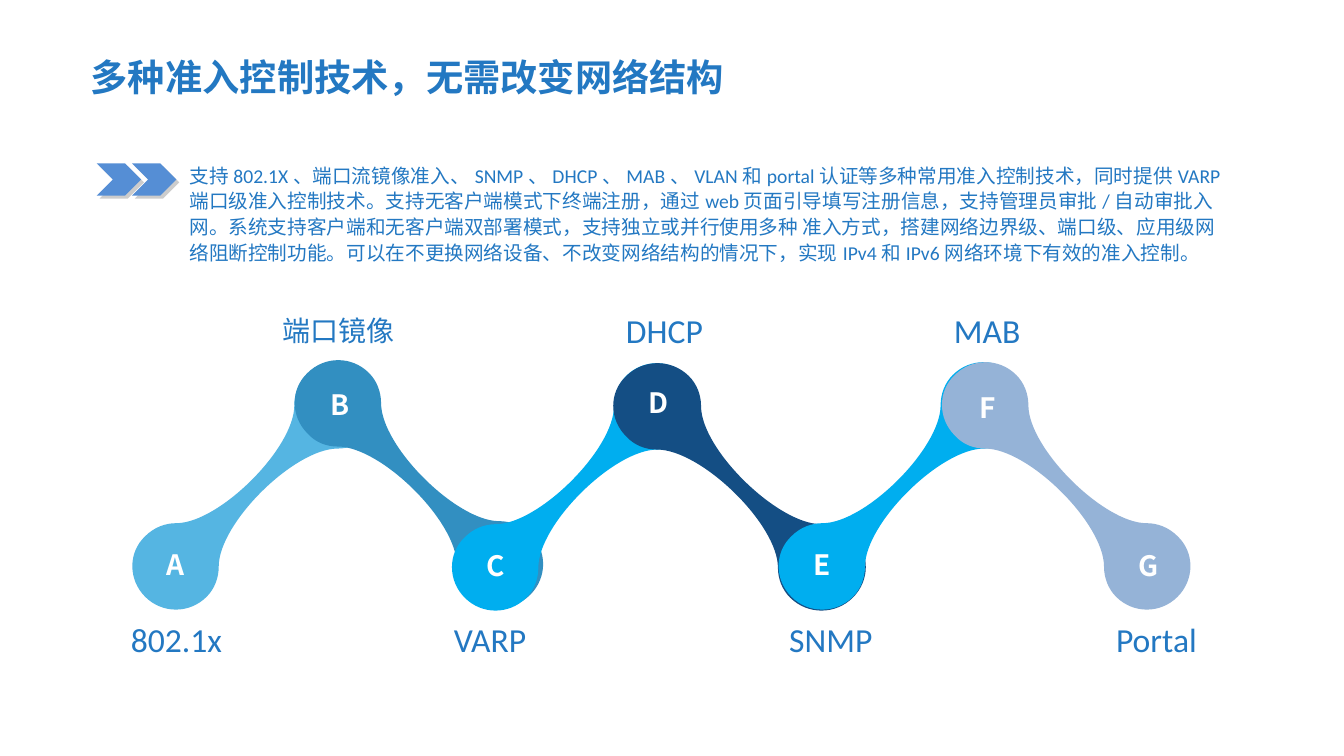
import pptx
import pptx.dml.color
import pptx.enum.shapes
import pptx.enum.text
import pptx.oxml.ns
import pptx.util
from lxml import etree

RGB = pptx.dml.color.RGBColor
Inches = pptx.util.Inches
qn = pptx.oxml.ns.qn
ALIGN = pptx.enum.text.PP_ALIGN
ANCHOR = pptx.enum.text.MSO_ANCHOR
PRESET = pptx.enum.shapes.MSO_SHAPE

BLUE = RGB(0x23, 0x78, 0xC2)
WHITE = RGB(0xFF, 0xFF, 0xFF)
CHEVRON = RGB(0x55, 0x8E, 0xD5)
SKY = RGB(0x55, 0xB5, 0xE2)
STEEL = RGB(0x32, 0x8F, 0xC1)
CYAN = RGB(0x00, 0xAE, 0xEF)
NAVY = RGB(0x14, 0x4E, 0x84)
PALE = RGB(0x95, 0xB3, 0xD7)
CJK = "Noto Sans CJK SC"
LATIN = "Calibri"


def write(box, text, size, font, color, bold=False, align=ALIGN.LEFT,
          anchor=ANCHOR.MIDDLE, inset=None, wrap=True):
    """Fill a box with one paragraph; inset None keeps the usual margins."""
    frame = box.text_frame
    frame.text = text
    frame.word_wrap = wrap
    frame.auto_size = pptx.enum.text.MSO_AUTO_SIZE.NONE
    frame.vertical_anchor = anchor
    if inset is not None:
        frame.margin_left = frame.margin_right = Inches(inset)
        frame.margin_top = frame.margin_bottom = Inches(inset)
    paragraph = frame.paragraphs[0]
    paragraph.alignment = align
    paragraph.font.size = pptx.util.Pt(size)
    paragraph.font.bold = bold
    paragraph.font.color.rgb = color
    paragraph.font.name = font
    defaults = paragraph._p.pPr.find(qn("a:defRPr"))
    etree.SubElement(defaults, qn("a:ea"), typeface=CJK)
    return paragraph


def paint(shape, color):
    """Plain fill without outline or shadow."""
    shape.shadow.inherit = False
    shape.fill.solid()
    shape.fill.fore_color.rgb = color
    shape.line.fill.background()


deck = pptx.Presentation()
deck.slide_width = Inches(13.33)
deck.slide_height = Inches(7.5)
slide = deck.slides.add_slide(deck.slide_layouts[5])
shapes = slide.shapes

title = shapes.title
title.left, title.top = Inches(0.9), Inches(0.54)
title.width, title.height = Inches(7.87), Inches(0.45)
write(title, "多种准入控制技术，无需改变网络结构", 26.6, CJK, BLUE, bold=True,
      anchor=ANCHOR.TOP, inset=0)

summary = shapes.add_textbox(Inches(1.78), Inches(1.55), Inches(10.48), Inches(1.13))
summary_text = write(
    summary,
    "支持802.1X、端口流镜像准入、SNMP、DHCP、MAB、VLAN和portal认证等多种常用准入控制技术，"
    "同时提供VARP端口级准入控制技术。支持无客户端模式下终端注册，通过web页面引导填写注册信息，"
    "支持管理员审批/自动审批入网。系统支持客户端和无客户端双部署模式，支持独立或并行使用多种 准入方式，"
    "搭建网络边界级、端口级、应用级网络阻断控制功能。可以在不更换网络设备、不改变网络结构的情况下，"
    "实现IPv4和IPv6网络环境下有效的准入控制。",
    14, LATIN, BLUE, anchor=ANCHOR.TOP)
summary_text.line_spacing = 1.1

for column in range(2):
    chevron = shapes.add_shape(PRESET.CHEVRON,
                               Inches(0.96 + 0.35 * column), Inches(1.62),
                               Inches(0.44), Inches(0.32))
    paint(chevron, CHEVRON)
    effects = chevron._element.spPr.find(qn("a:effectLst"))
    shadow = etree.SubElement(effects, qn("a:outerShdw"), blurRad="0", dist="38100",
                              dir="2700000", algn="tl", rotWithShape="0")
    black = etree.SubElement(shadow, qn("a:srgbClr"), val="000000")
    etree.SubElement(black, qn("a:alpha"), val="20000")

# A falling link in hundredths of an inch: a disc at top left tapering into
# one at bottom right; each curve has two control points and an end
LINK_WIDTH, LINK_HEIGHT = 246, 245
LINK_START = (13, 73)
LINK_CURVES = [
    ((21, 82), (32, 86), (43, 86)),
    ((86, 86), (161, 160), (161, 203)),
    ((161, 214), (165, 225), (173, 233)),
    ((190, 250), (217, 250), (234, 233)),
    ((251, 216), (251, 189), (234, 173)),
    ((225, 164), (214, 160), (203, 160)),
    ((161, 160), (86, 86), (86, 43)),
    ((86, 32), (82, 21), (74, 13)),
    ((57, -4), (30, -4), (13, 13)),
    ((-4, 29), (-4, 56), (13, 73)),
]

# left, top, width, colour; links rise and fall in turn
links = [
    (1.32, 3.59, 2.46, SKY),
    (2.92, 3.57, 2.46, STEEL),
    (4.49, 3.60, 2.46, CYAN),
    (6.08, 3.60, 2.50, NAVY),
    (7.73, 3.59, 2.46, CYAN),
    (9.34, 3.59, 2.46, PALE),
]
for index, (left, top, width, color) in enumerate(links):
    rising = index % 2 == 0
    builder = shapes.build_freeform(*LINK_START, scale=Inches(0.01))
    builder.add_line_segments([curve[-1] for curve in LINK_CURVES], close=True)
    link = builder.convert_to_shape()
    link.left, link.top = Inches(left), Inches(top)
    link.width, link.height = Inches(width), Inches(LINK_HEIGHT / 100)
    paint(link, color)

    # Bend the straight outline into curves
    outline = next(link._element.iter(qn("a:path")))
    for segment in list(outline):
        outline.remove(segment)
    outline.set("w", str(LINK_WIDTH))
    outline.set("h", str(LINK_HEIGHT))
    steps = [("a:moveTo", [LINK_START])]
    steps += [("a:cubicBezTo", curve) for curve in LINK_CURVES]
    for tag, points in steps + [("a:close", [])]:
        segment = etree.SubElement(outline, qn(tag))
        for x, y in points:
            etree.SubElement(segment, qn("a:pt"), y=str(y),
                             x=str(LINK_WIDTH - x if rising else x))

# letter, its left, top and width, then the label with its left and size
nodes = [
    ("A", 1.59, 5.37, 0.32, "802.1x", 1.04, 24),
    ("B", 3.22, 3.79, 0.30, "端口镜像", 2.65, 20),
    ("C", 4.77, 5.38, 0.30, "VARP", 4.15, 24),
    ("D", 6.37, 3.77, 0.34, "DHCP", 5.88, 24),
    ("E", 8.01, 5.37, 0.27, "SNMP", 7.53, 24),
    ("F", 9.66, 3.82, 0.27, "MAB", 9.08, 24),
    ("G", 11.23, 5.38, 0.32, "Portal", 10.76, 24),
]
for index, (letter, left, top, width, label, label_left, label_size) in enumerate(nodes):
    place = Inches(left), Inches(top), Inches(width), Inches(0.45)
    if letter in "FG":
        mark = shapes.add_shape(PRESET.RECTANGLE, *place)
        paint(mark, PALE)
    else:
        mark = shapes.add_textbox(*place)
    write(mark, letter, 20, CJK, WHITE, bold=True, inset=0.06, wrap=False)
    label_top = 6.11 if index % 2 == 0 else 3.04
    caption = shapes.add_textbox(Inches(label_left), Inches(label_top),
                                 Inches(1.42), Inches(0.47))
    write(caption, label, label_size, LATIN, BLUE, align=ALIGN.CENTER)

deck.save("out.pptx")
